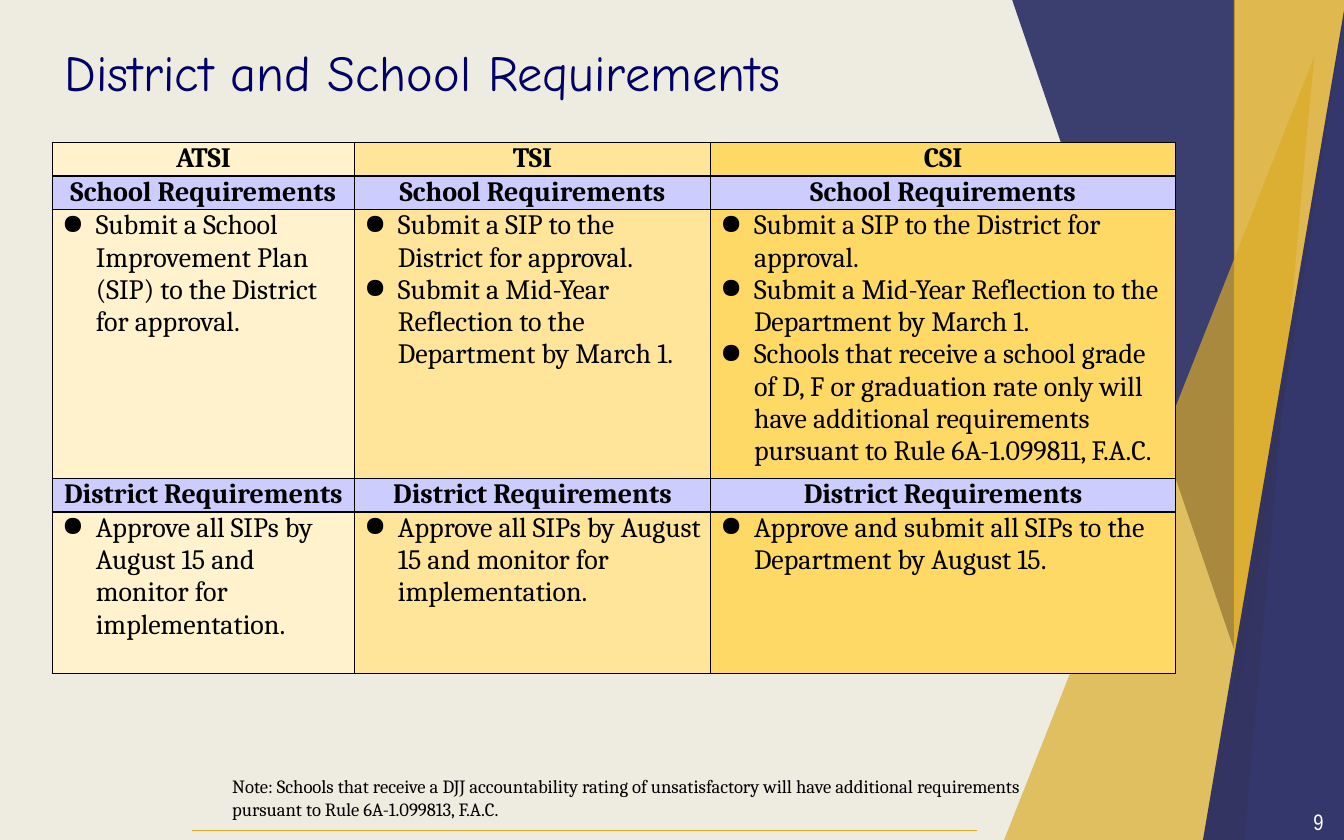
"""Build the District and School Requirements slide."""
from dataclasses import dataclass

from lxml import etree
from pptx import Presentation
from pptx import util as u
from pptx.dml.color import RGBColor
from pptx.enum import shapes, text
from pptx.oxml import ns

COLORS = {
    "page": "EEECE1", "navy": "262A63", "gold": "DBAB27", "title": "000066",
    "ink": "000000", "white": "FFFFFF", "band": "CCCCFF",
}
BODY_FONT = "Cambria"
ROW_HEIGHTS = (0.61, 0.61, 4.93, 0.61, 3.05)


@dataclass(frozen=True)
class Shard:
    color: str
    opacity: int
    points: tuple[tuple[float, float], ...]


@dataclass(frozen=True)
class Tier:
    name: str
    fill: str
    width: float
    school: tuple[str, ...]
    district: str


SHARDS = (
    Shard("navy", 89, ((19.13, 0), (23.32, 12.27), (23.34, 0))),
    Shard("gold", 78, ((23.32, 0), (23.32, 13.61), (25.45, 0))),
    Shard("gold", 69, ((18.87, 16.15), (24.84, 1.07), (24.69, 2.64), (23.5, 16.08))),
    Shard("navy", 93, ((22.71, 16.03), (25.43, 0.03), (25.43, 16.03))),
)
SUBMIT_SIP = "Submit a SIP to the District for approval."
REFLECTION = "Submit a Mid-Year Reflection to the Department by March 1."
APPROVE = "Approve all SIPs by August 15 and monitor for implementation."
TIERS = (
    Tier("ATSI", "FFF2CC", 5.71,
         ("Submit a School Improvement Plan (SIP) to the District for approval.",), APPROVE),
    Tier("TSI", "FFE599", 6.73, (SUBMIT_SIP, REFLECTION), APPROVE),
    Tier("CSI", "FFD966", 8.79,
         (SUBMIT_SIP, REFLECTION,
          "Schools that receive a school grade of D, F or graduation rate only will have "
          "additional requirements pursuant to Rule 6A-1.099811, F.A.C."),
         "Approve and submit all SIPs to the Department by August 15."),
)
NOTE = ("Note: Schools that receive a DJJ accountability rating of unsatisfactory will have "
        "additional requirements pursuant to Rule 6A-1.099813, F.A.C.")


def rgb(name: str) -> RGBColor:
    """Return a named colour."""
    return RGBColor.from_string(COLORS[name])


def add_node(parent, tag: str, **attributes: str):
    """Append one drawing element."""
    return etree.SubElement(parent, ns.qn(tag), attributes)


def style(para, face: str, size: float, color: str, bold: bool = False) -> None:
    """Set the font of a whole paragraph."""
    font = para.font
    font.name, font.size, font.bold = face, u.Pt(size), bold
    font.color.rgb = rgb(color)


def draw_shard(page, shard: Shard) -> None:
    """Draw one translucent polygon."""
    start, *rest = [(u.Cm(x), u.Cm(y)) for x, y in shard.points]
    builder = page.shapes.build_freeform(*start)
    builder.add_line_segments(rest, close=True)
    shape = builder.convert_to_shape()
    shape.shadow.inherit = False
    shape.line.fill.background()
    shape.fill.solid()
    shape.fill.fore_color.rgb = rgb(shard.color)
    color = shape.fill._xPr.find(".//" + ns.qn("a:srgbClr"))
    add_node(color, "a:alpha", val=str(shard.opacity * 1000))


def draw_rule(page) -> None:
    """Draw the gold footer line."""
    y = u.Cm(15.7)
    rule = page.shapes.add_connector(
        shapes.MSO_CONNECTOR.STRAIGHT, u.Cm(3.63), y, u.Cm(18.47), y)
    rule.line.color.rgb = rgb("gold")
    rule.line.width = u.Pt(0.75)
    add_node(rule._element.spPr, "a:effectLst")


def draw_text(page, words: str, area: tuple[float, ...], face: str, size: float,
              color: str, align=text.PP_ALIGN.LEFT, anchor=text.MSO_ANCHOR.TOP) -> None:
    """Draw a wrapping text box."""
    frame = page.shapes.add_textbox(*map(u.Cm, area)).text_frame
    frame.word_wrap = True
    frame.vertical_anchor = anchor
    para = frame.paragraphs[0]
    para.text, para.alignment = words, align
    style(para, face, size, color)


def draw_title(page) -> None:
    """Place and format the title placeholder."""
    title = page.shapes.title
    title.left, title.top, title.width, title.height = map(u.Cm, (0.97, 0.43, 16.15, 1.85))
    frame = title.text_frame
    frame.auto_size = text.MSO_AUTO_SIZE.NONE
    frame.vertical_anchor = text.MSO_ANCHOR.MIDDLE
    para = frame.paragraphs[0]
    para.text, para.alignment = "District and School Requirements", text.PP_ALIGN.LEFT
    style(para, "Comic Neue", 27, "title")


def add_bullet(para) -> None:
    """Give a paragraph a hanging round bullet."""
    props = para._p.get_or_add_pPr()
    indent = u.Cm(0.64)
    props.set("marL", str(indent))
    props.set("indent", str(-indent))
    add_node(add_node(props, "a:buClr"), "a:srgbClr", val=COLORS["ink"])
    add_node(props, "a:buChar", char="●")


def fill_cell(cell, lines: tuple[str, ...], fill: str, heading: bool) -> None:
    """Border, fill and write one table cell."""
    props = cell._tc.get_or_add_tcPr()
    for side in ("L", "R", "T", "B"):
        border = add_node(props, f"a:ln{side}", w=str(u.Pt(1)))
        add_node(add_node(border, "a:solidFill"), "a:srgbClr", val=COLORS["ink"])
    cell.fill.solid()
    cell.fill.fore_color.rgb = RGBColor.from_string(fill)
    cell.margin_left = cell.margin_right = u.Cm(0.18)
    cell.margin_top = cell.margin_bottom = 0
    frame = cell.text_frame
    for index, line in enumerate(lines):
        para = frame.add_paragraph() if index else frame.paragraphs[0]
        para.text = line
        if heading:
            para.alignment = text.PP_ALIGN.CENTER
        else:
            add_bullet(para)
        style(para, BODY_FONT, 15, "ink", heading)


def draw_table(page) -> None:
    """Draw the requirements of every tier, one column each."""
    width = sum(tier.width for tier in TIERS)
    area = map(u.Cm, (0.99, 2.69, width, sum(ROW_HEIGHTS)))
    table = page.shapes.add_table(len(ROW_HEIGHTS), len(TIERS), *area).table
    table.first_row = table.horz_banding = False
    for row, height in zip(table.rows, ROW_HEIGHTS):
        row.height = u.Cm(height)
    for column, tier in enumerate(TIERS):
        table.columns[column].width = u.Cm(tier.width)
        entries = (
            ((tier.name,), tier.fill, True),
            (("School Requirements",), COLORS["band"], True),
            (tier.school, tier.fill, False),
            (("District Requirements",), COLORS["band"], True),
            ((tier.district,), tier.fill, False),
        )
        for row, entry in enumerate(entries):
            fill_cell(table.cell(row, column), *entry)


def main() -> None:
    """Assemble and save the deck."""
    deck = Presentation()
    deck.slide_width, deck.slide_height = u.Cm(25.4), u.Cm(15.88)
    page = deck.slides.add_slide(deck.slide_layouts[5])
    page.background.fill.solid()
    page.background.fill.fore_color.rgb = rgb("page")
    for shard in SHARDS:
        draw_shard(page, shard)
    draw_rule(page)
    draw_text(page, "9", (24.21, 15.11, 1.42, 0.86), "Arial Narrow", 12, "white",
              text.PP_ALIGN.CENTER, text.MSO_ANCHOR.MIDDLE)
    draw_title(page)
    draw_table(page)
    draw_text(page, NOTE, (4.14, 14.53, 15.47, 1.12), BODY_FONT, 10, "ink")
    deck.save("out.pptx")


if __name__ == "__main__":
    main()
